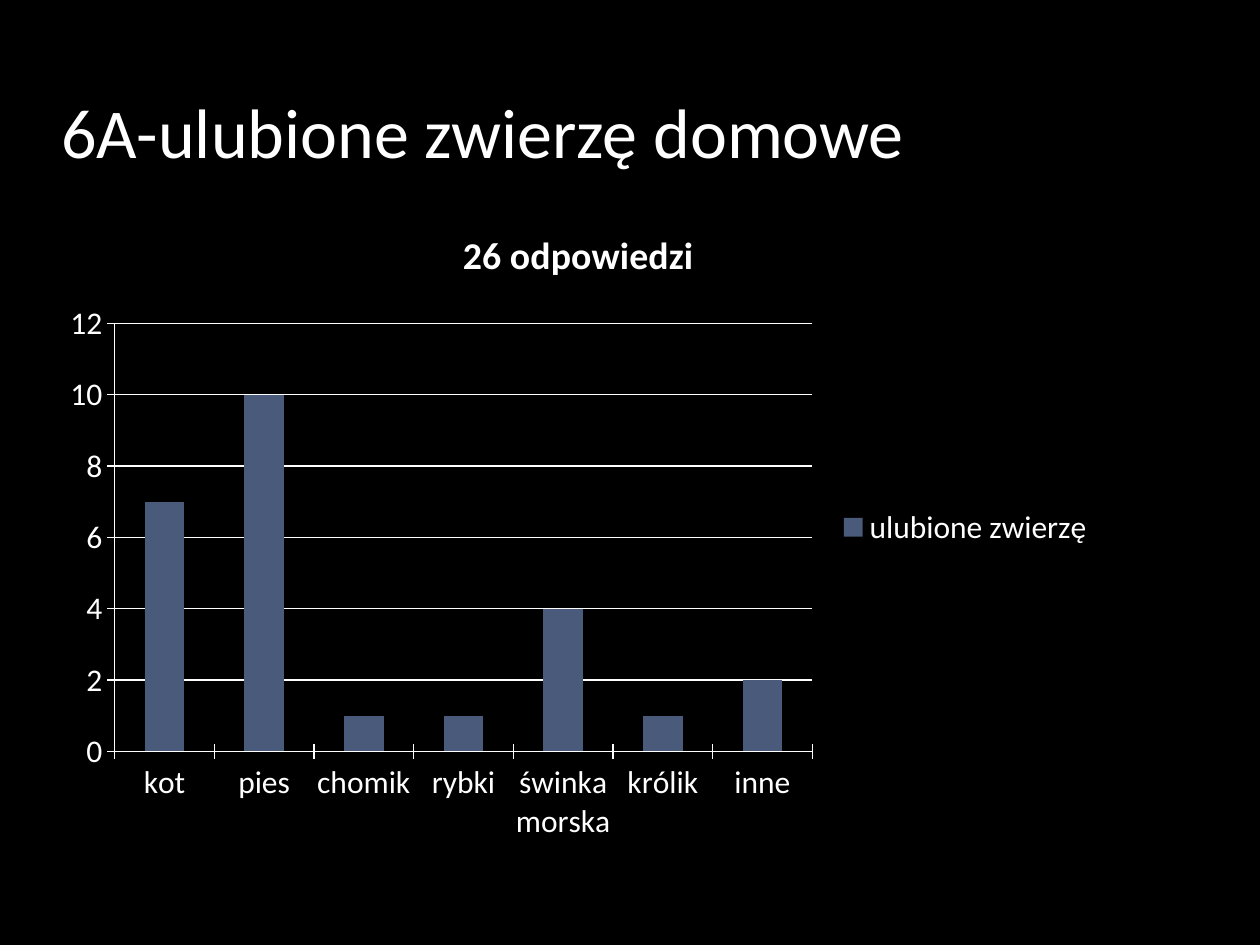
from dataclasses import dataclass

from pptx import Presentation
from pptx import util as u
from pptx.chart.data import CategoryChartData
from pptx.dml.color import RGBColor
from pptx.enum import chart as charts
from pptx.enum import text


@dataclass(frozen=True)
class Theme:
    font: str = "Calibri"
    background: RGBColor = RGBColor(0, 0, 0)
    ink: RGBColor = RGBColor(255, 255, 255)
    bar: RGBColor = RGBColor(0x4A, 0x5A, 0x7A)
    title_size: float = 40
    chart_title_size: float = 21.6
    chart_size: float = 18
    line_width: float = 0.75


class SlideBuilder:
    def __init__(self, deck, theme):
        self.theme = theme
        self.page = deck.slides.add_slide(deck.slide_layouts[6])
        fill = self.page.background.fill
        fill.solid()
        fill.fore_color.rgb = theme.background

    def style_font(self, font, size, bold=False):
        font.name = self.theme.font
        font.size = u.Pt(size)
        font.bold = bold
        font.color.rgb = self.theme.ink

    def style_line(self, line):
        line.color.rgb = self.theme.ink
        line.width = u.Pt(self.theme.line_width)

    def title(self, words, left, top, width, height):
        box = self.page.shapes.add_textbox(*map(u.Inches, (left, top, width, height)))
        frame = box.text_frame
        frame.word_wrap = True
        frame.vertical_anchor = text.MSO_ANCHOR.BOTTOM
        para = frame.paragraphs[0]
        para.space_before = u.Pt(4)
        span = para.add_run()
        span.text = words
        self.style_font(span.font, self.theme.title_size)

    def column_chart(self, heading, series_name, values, left, top, width, height):
        data = CategoryChartData()
        data.categories = list(values)
        data.add_series(series_name, list(values.values()))
        chart = self.page.shapes.add_chart(
            charts.XL_CHART_TYPE.COLUMN_STACKED,
            *map(u.Inches, (left, top, width, height)), data).chart
        self.style_font(chart.font, self.theme.chart_size)

        chart.has_title = True
        span = chart.chart_title.text_frame.paragraphs[0].add_run()
        span.text = heading
        self.style_font(span.font, self.theme.chart_title_size, bold=True)

        chart.has_legend = True
        chart.legend.position = charts.XL_LEGEND_POSITION.RIGHT
        chart.legend.include_in_layout = False

        plot = chart.plots[0]
        plot.gap_width, plot.overlap = 150, 100
        plot.vary_by_categories = False
        fill = plot.series[0].format.fill
        fill.solid()
        fill.fore_color.rgb = self.theme.bar

        for axis in (chart.category_axis, chart.value_axis):
            axis.major_tick_mark = charts.XL_TICK_MARK.CROSS
            self.style_line(axis.format.line)
        chart.value_axis.has_major_gridlines = True
        self.style_line(chart.value_axis.major_gridlines.format.line)


def main():
    deck = Presentation()
    deck.slide_width, deck.slide_height = u.Inches(10), u.Inches(7.5)
    slide = SlideBuilder(deck, Theme())

    left, width = 0.39, 8.4
    pets = {"kot": 7, "pies": 10, "chomik": 1, "rybki": 1,
            "świnka morska": 4, "królik": 1, "inne": 2}
    slide.column_chart("26 odpowiedzi", "ulubione zwierzę", pets,
                       left, 1.6, width, 5.17)
    slide.title("6A-ulubione zwierzę domowe", left, 0.25, width, 1.17)
    deck.save("out.pptx")


if __name__ == "__main__":
    main()
